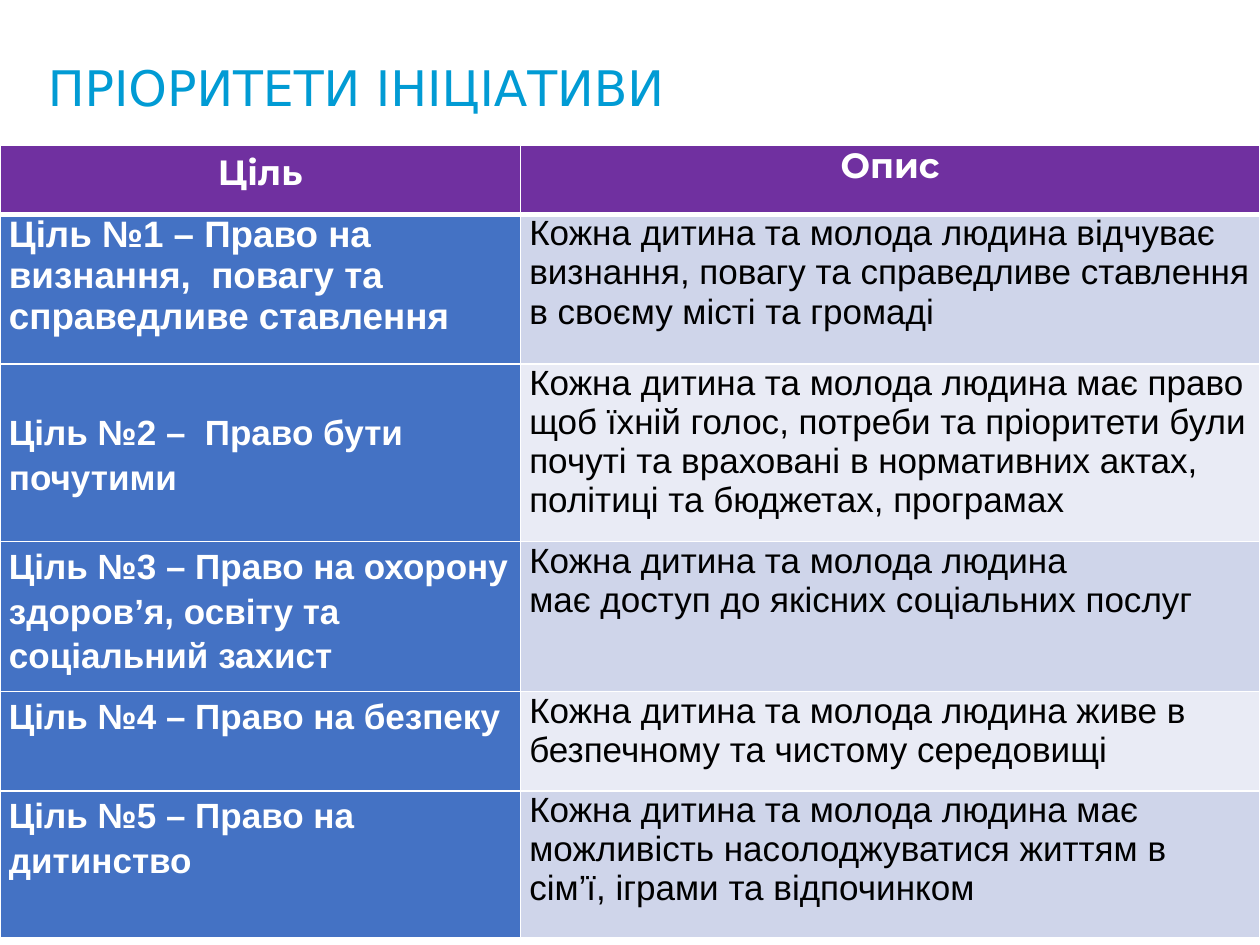
from pptx import Presentation
from pptx.dml.color import RGBColor as RGB
from pptx.enum.text import MSO_ANCHOR as ANCHOR, PP_ALIGN as ALIGN
from pptx.oxml.ns import qn
from pptx.util import Cm, Pt
from lxml.etree import SubElement

COLORS = {
    "title": "019BD4", "header": "7030A0", "goal": "4472C4",
    "band_dark": "CFD5EA", "band_light": "E9EBF5",
    "white": "FFFFFF", "black": "000000",
}

TITLE = "ПРІОРИТЕТИ ІНІЦІАТИВИ"
HEADERS = ["Ціль", "Опис"]
GOALS = [
    ("Ціль №1 – Право на визнання,  повагу та справедливе ставлення",
     "Кожна дитина та молода людина відчуває визнання, повагу та "
     "справедливе ставлення в своєму місті та громаді"),
    ("Ціль №2 –  Право бути почутими",
     "Кожна дитина та молода людина має право щоб їхній голос, потреби та "
     "пріоритети були почуті та враховані в нормативних актах, політиці та "
     "бюджетах, програмах"),
    ("Ціль №3 – Право на охорону здоров’я, освіту та соціальний захист",
     "Кожна дитина та молода людина\nмає доступ до якісних соціальних послуг"),
    ("Ціль №4 – Право на безпеку",
     "Кожна дитина та молода людина живе в безпечному та чистому середовищі"),
    ("Ціль №5 – Право на дитинство",
     "Кожна дитина та молода людина має можливість насолоджуватися життям в "
     "сім’ї, іграми та відпочинком"),
]
COL_WIDTHS = [10.49, 14.91]
ROW_HEIGHTS = [1.4, 3.02, 3.58, 3.02, 2.01, 2.95]


class SlideBuilder:
    """Holds the style and the current slide."""

    def __init__(self, slide, colors):
        self.s = slide
        self.colors = colors

    def add_text(self, tf, text, color, spacing=1.0, align=ALIGN.LEFT, **font):
        for i, line in enumerate(text.split("\n")):
            p = tf.paragraphs[0] if i == 0 else tf.add_paragraph()
            p.alignment, p.line_spacing = align, spacing
            p.space_before = p.space_after = Pt(0)
            r = p.add_run()
            r.text = line
            for name, value in font.items():
                setattr(r.font, name, value)
            r.font.color.rgb = RGB.from_string(self.colors[color])

    def title(self, text, left, top, width, height):
        sp = self.s.shapes.title
        sp.left, sp.top, sp.width, sp.height = map(Cm, (left, top, width, height))
        tf = sp.text_frame
        tf.word_wrap = True
        tf.vertical_anchor = ANCHOR.TOP
        self.add_text(tf, text, "title", 0.9, name="DejaVu Sans", size=Pt(28), bold=False)

    def table(self, left, top, col_widths, row_heights):
        frame = self.s.shapes.add_table(
            len(row_heights), len(col_widths), Cm(left), Cm(top),
            Cm(sum(col_widths)), Cm(sum(row_heights)))
        tbl = frame.table
        for col, width in zip(tbl.columns, col_widths):
            col.width = Cm(width)
        for row, height in zip(tbl.rows, row_heights):
            row.height = Cm(height)
        return tbl

    def borders(self, cell, top=1, bottom=1):
        tc_pr = cell._tc.get_or_add_tcPr()
        for side, points in {"L": 1, "R": 1, "T": top, "B": bottom}.items():
            ln = SubElement(tc_pr, qn(f"a:ln{side}"), w=str(Pt(points)))
            fill = SubElement(ln, qn("a:solidFill"))
            SubElement(fill, qn("a:srgbClr"), val=self.colors["white"])

    def cell(self, cell, text, fill, color, top=1, bottom=1, inset=0, **style):
        self.borders(cell, top, bottom)
        cell.fill.solid()
        cell.fill.fore_color.rgb = RGB.from_string(self.colors[fill])
        cell.margin_left = cell.margin_right = Cm(0.18)
        cell.margin_top, cell.margin_bottom = Cm(inset), Cm(0)
        cell.vertical_anchor = ANCHOR.TOP
        self.add_text(cell.text_frame, text, color, **style)


def main():
    prs = Presentation()
    prs.slide_width, prs.slide_height = Cm(25.4), Cm(19.05)
    b = SlideBuilder(prs.slides.add_slide(prs.slide_layouts[5]), COLORS)

    # Title
    b.title(TITLE, 0.71, 1.17, 17.2, 1.52)

    # Table header
    tbl = b.table(0, 2.92, COL_WIDTHS, ROW_HEIGHTS)
    for col, (text, spacing) in enumerate(zip(HEADERS, (1.15, 1.0))):
        b.cell(tbl.cell(0, col), text, "header", "white", bottom=3, spacing=spacing,
               align=ALIGN.CENTER, name="Montserrat", size=Pt(20), bold=True)

    # Goals and their descriptions
    for row, (goal, description) in enumerate(GOALS, 1):
        first = row == 1
        top = 3 if first else 1
        b.cell(tbl.cell(row, 0), goal, "goal", "white", top=top,
               inset=0.89 if row == 2 else 0, spacing=1.0 if first else 1.15,
               name="Arial", size=Pt(21 if first else 20), bold=True)
        b.cell(tbl.cell(row, 1), description, "band_dark" if row % 2 else "band_light",
               "black", top=top, name="Arial", size=Pt(20), bold=False)

    prs.save("out.pptx")


if __name__ == "__main__":
    main()
